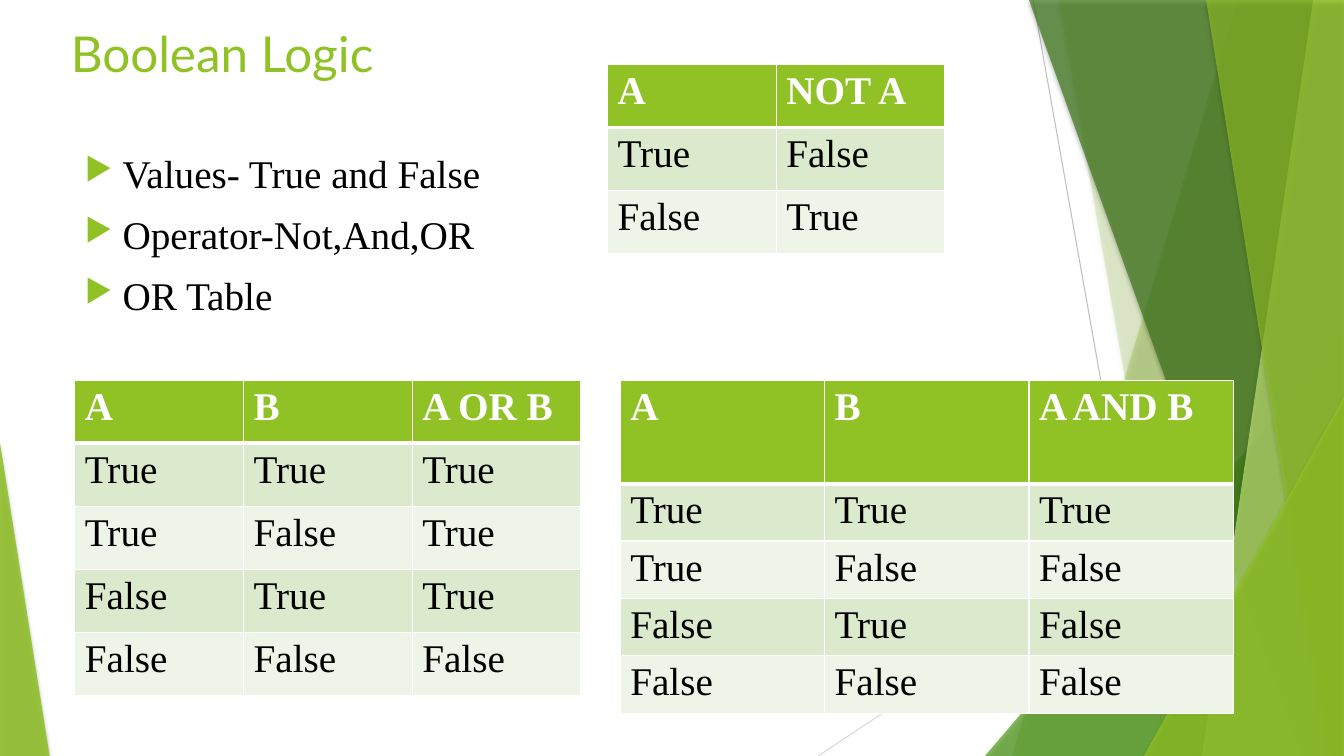
from lxml import etree
from pptx import Presentation
from pptx.dml.color import RGBColor
from pptx.enum.shapes import MSO_CONNECTOR, MSO_SHAPE
from pptx.enum.text import MSO_ANCHOR
from pptx.oxml import parse_xml
from pptx.oxml.ns import nsdecls, qn
from pptx.util import Pt

STRAIGHT = MSO_CONNECTOR.STRAIGHT
TRIANGLE = MSO_SHAPE.ISOSCELES_TRIANGLE
MIDDLE = MSO_ANCHOR.MIDDLE
WIDTH, HEIGHT = 960, 540
GREEN = "90C226"
SERIF = "Times New Roman"
SHADOW = (
    f'<a:effectLst {nsdecls("a")}><a:outerShdw blurRad="{Pt(3)}" dist="{Pt(2)}" dir="5400000">'
    '<a:srgbClr val="000000"><a:alpha val="35000"/></a:srgbClr></a:outerShdw></a:effectLst>'
)


def color(hex_value):
    return RGBColor.from_string(hex_value)


def style_run(span, font_name, size, hex_value, bold=False):
    span.font.name = font_name
    span.font.size = Pt(size)
    span.font.bold = bold
    span.font.color.rgb = color(hex_value)


deck = Presentation()
deck.slide_width, deck.slide_height = Pt(WIDTH), Pt(HEIGHT)
page = deck.slides.add_slide(deck.slide_layouts[6])

for x1, y1, x2, y2, hex_value in [
    (738, 0, 834, HEIGHT, "BFBFBF"),
    (WIDTH, 290, 584.5, HEIGHT, "D9D9D9"),
]:
    ray = page.shapes.add_connector(STRAIGHT, Pt(x1), Pt(y1), Pt(x2), Pt(y2))
    ray.line.width = Pt(0.75)
    ray.line.color.rgb = color(hex_value)
    etree.SubElement(ray._element.spPr, qn("a:effectLst"))

# A band runs from a top x to a bottom x; a corner is left, top, width, apex.
facets = [
    ("band", (884, 723), GREEN, 30),
    ("band", (756, 851), GREEN, 20),
    ("corner", (703.5, 240, 256.5, 1), "54A021", 72),
    ("band", (735, 929.5), "3F7819", 70),
    ("band", (938, 858.5), "C0E474", 70),
    ("band", (861.5, 948), GREEN, 65),
    ("corner", (817, 283, 143, 1), GREEN, 80),
    ("corner", (0, 316, 35.5, 0), GREEN, 85),
]
for kind, geometry, hex_value, opacity in facets:
    if kind == "band":
        top_x, bottom_x = geometry
        outline = page.shapes.build_freeform(Pt(top_x), 0)
        corners = [(WIDTH, 0), (WIDTH, HEIGHT), (bottom_x, HEIGHT)]
        outline.add_line_segments([(Pt(x), Pt(y)) for x, y in corners])
        facet = outline.convert_to_shape()
    else:
        left, top, width, apex = geometry
        facet = page.shapes.add_shape(TRIANGLE, Pt(left), Pt(top), Pt(width), Pt(HEIGHT - top))
        facet.adjustments[0] = apex
    facet.fill.solid()
    facet.fill.fore_color.rgb = color(hex_value)
    tint = facet._element.spPr.find(qn("a:solidFill"))[0]
    etree.SubElement(tint, qn("a:alpha")).set("val", str(opacity * 1000))
    facet.line.fill.background()
    facet._element.spPr.append(parse_xml(SHADOW))

title = page.shapes.add_textbox(Pt(43.5), Pt(13), Pt(677), Pt(50)).text_frame
title.word_wrap = True
title.vertical_anchor = MIDDLE
title.text = "Boolean Logic"
style_run(title.paragraphs[0].runs[0], "Lato", 35.3, GREEN)

body = page.shapes.add_textbox(Pt(53.5), Pt(103), Pt(872), Pt(430)).text_frame
body.word_wrap = True
body.text = "Values- True and False\nOperator-Not,And,OR\nOR Table"
for index, para in enumerate(body.paragraphs):
    properties = para._p.get_or_add_pPr()
    properties.set("marL", str(Pt(27)))
    properties.set("indent", str(Pt(-27)))
    bullet_color = etree.SubElement(properties, qn("a:buClr"))
    etree.SubElement(bullet_color, qn("a:srgbClr")).set("val", GREEN)
    etree.SubElement(properties, qn("a:buSzPct")).set("val", "80000")
    etree.SubElement(properties, qn("a:buChar")).set("char", "▶")
    if index:
        para.space_before = Pt(10)
    style_run(para.runs[0], SERIF, 28, "000000")

pairs = [(True, True), (True, False), (False, True), (False, False)]
truth_tables = [
    (53.5, 271.5, 120.5, 45.1, 45.1, [("A", "B", "A OR B")] + [(a, b, a or b) for a, b in pairs]),
    (443, 271.5, 146, 74, 41, [("A", "B", "A AND B")] + [(a, b, a and b) for a, b in pairs]),
    (434, 46, 120.5, 45.1, 45.1, [("A", "NOT A")] + [(a, not a) for a in (True, False)]),
]
for left, top, column_width, header_height, row_height, rows in truth_tables:
    columns = len(rows[0])
    height = header_height + row_height * (len(rows) - 1)
    grid = page.shapes.add_table(
        len(rows), columns, Pt(left), Pt(top), Pt(column_width * columns), Pt(height)
    ).table
    for column in grid.columns:
        column.width = Pt(column_width)
    for r, values in enumerate(rows):
        header = r == 0
        grid.rows[r].height = Pt(header_height if header else row_height)
        fill = GREEN if header else ("EEF4E7", "DBE9CC")[r % 2]
        for c, value in enumerate(values):
            cell = grid.cell(r, c)
            cell.text = str(value)
            style_run(
                cell.text_frame.paragraphs[0].runs[0],
                SERIF, 28, "FFFFFF" if header else "000000", header,
            )
            for side in ("lnL", "lnR", "lnT", "lnB"):
                thick = (r, side) in [(0, "lnB"), (1, "lnT")]
                border = etree.SubElement(cell._tc.get_or_add_tcPr(), qn(f"a:{side}"))
                border.set("w", str(Pt(3 if thick else 0.96)))
                paint = etree.SubElement(border, qn("a:solidFill"))
                etree.SubElement(paint, qn("a:srgbClr")).set("val", "FFFFFF")
            cell.fill.solid()
            cell.fill.fore_color.rgb = color(fill)

deck.save("out.pptx")
